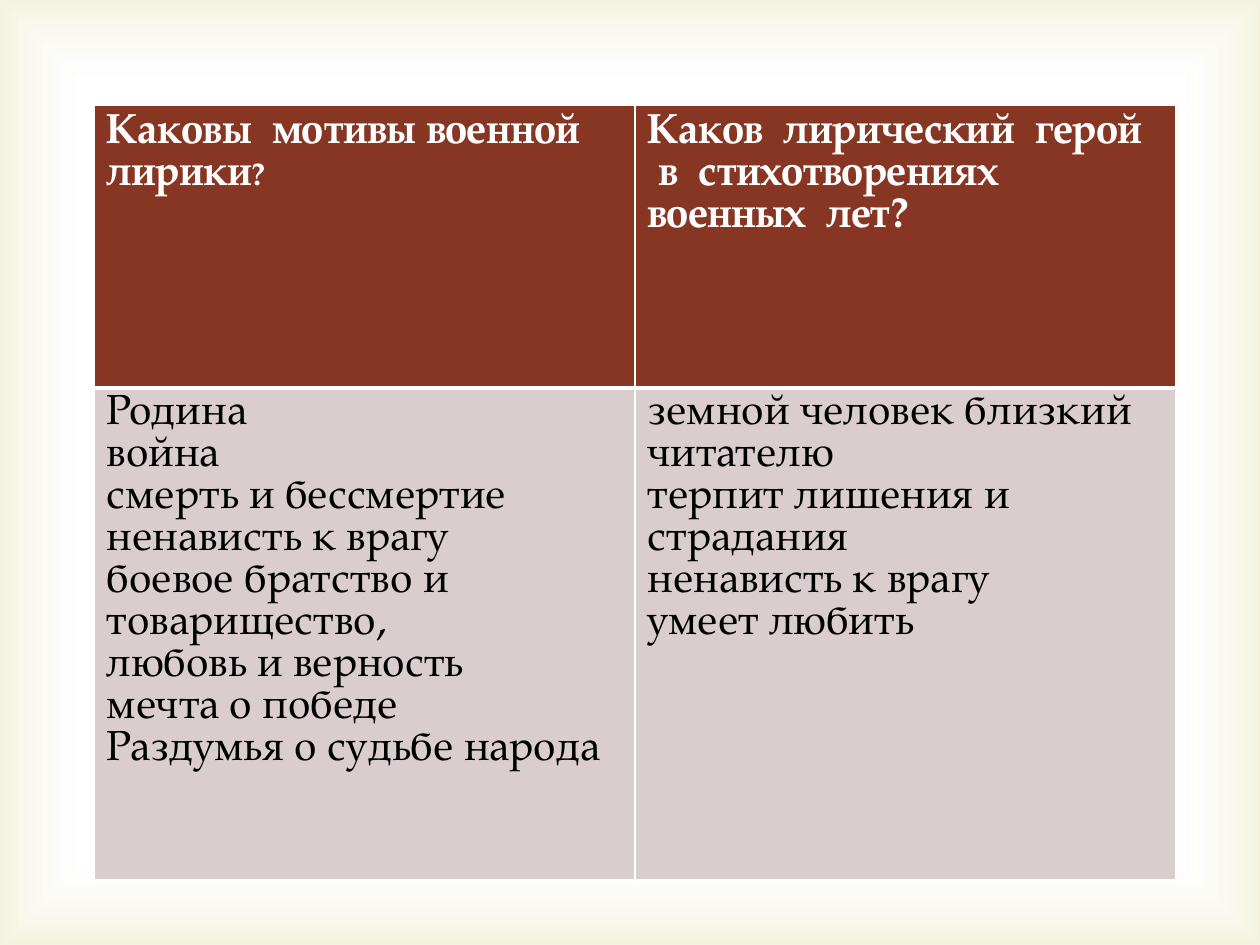
from dataclasses import dataclass

from lxml import etree
from pptx import Presentation
from pptx.dml.color import RGBColor
from pptx.enum import shapes
from pptx.oxml import parse_xml
from pptx.oxml.ns import nsdecls, qn
from pptx.util import Cm, Pt


@dataclass(frozen=True)
class Theme:
    font: str = "TeX Gyre Pagella"
    size: int = 24
    small: int = 18
    line_pitch: int = 24
    thin: int = 1
    thick: int = 3
    white: str = "FFFFFF"
    black: str = "000000"
    glow: str = "D1CA75"
    header: str = "873624"
    body: str = "D9CECD"


@dataclass(frozen=True)
class Column:
    question: str
    answers: tuple[str, ...]
    small_ending: str = ""


THEME = Theme()
COLUMNS = (
    Column(
        "Каковы  мотивы военной лирики",
        (
            "Родина",
            "война",
            "смерть и бессмертие",
            "ненависть к врагу",
            "боевое братство и товарищество,",
            "любовь и верность",
            "мечта о победе",
            "Раздумья о судьбе народа",
        ),
        small_ending="?",
    ),
    Column(
        "Каков  лирический  герой   в  стихотворениях  военных  лет?",
        (
            "земной человек близкий читателю",
            "терпит лишения и страдания",
            "ненависть к врагу",
            "умеет любить",
        ),
    ),
)
SLIDE_WIDTH, SLIDE_HEIGHT = Cm(25.4), Cm(19.05)
TABLE_LEFT, TABLE_TOP = Cm(1.9), Cm(2.13)
COLUMN_WIDTH = Cm(10.9)
ROW_HEIGHTS = (Cm(5.69), Cm(9.91))


def add_glow(slide) -> None:
    """Cover the slide with a gradient that tints only its edges."""
    glow = slide.shapes.add_shape(
        shapes.MSO_SHAPE.RECTANGLE, 0, 0, SLIDE_WIDTH, SLIDE_HEIGHT
    )
    glow.shadow.inherit = False
    glow.line.fill.background()
    glow.fill.background()
    stops = "".join(
        f'<a:gs pos="{position}000"><a:srgbClr val="{color}">'
        f'<a:alpha val="{alpha}000"/></a:srgbClr></a:gs>'
        for position, color, alpha in ((83, THEME.white, 11), (100, THEME.glow, 23))
    )
    gradient = parse_xml(
        f'<a:gradFill {nsdecls("a")} rotWithShape="1"><a:gsLst>{stops}</a:gsLst>'
        '<a:path path="rect"><a:fillToRect l="50000" t="50000" r="50000" b="50000"/>'
        "</a:path></a:gradFill>"
    )
    properties = glow.element.spPr
    properties.replace(properties.find(qn("a:noFill")), gradient)


def set_borders(cell, top: int, bottom: int) -> None:
    properties = cell._tc.get_or_add_tcPr()
    widths = (("L", THEME.thin), ("R", THEME.thin), ("T", top), ("B", bottom))
    for index, (side, width) in enumerate(widths):
        line = etree.Element(qn(f"a:ln{side}"), w=str(Pt(width)))
        fill = etree.SubElement(line, qn("a:solidFill"))
        etree.SubElement(fill, qn("a:srgbClr"), val=THEME.white)
        properties.insert(index, line)


def style_cell(cell, fill: str, color: str, bold: bool) -> None:
    cell.fill.solid()
    cell.fill.fore_color.rgb = RGBColor.from_string(fill)
    for paragraph in cell.text_frame.paragraphs:
        paragraph.line_spacing = Pt(THEME.line_pitch)
        for run in paragraph.runs:
            run.font.name = THEME.font
            run.font.size = Pt(THEME.size)
            run.font.bold = bold
            run.font.color.rgb = RGBColor.from_string(color)


def fill_column(table, index: int, column: Column) -> None:
    table.columns[index].width = COLUMN_WIDTH
    question, answers = table.cell(0, index), table.cell(1, index)

    question.text_frame.text = column.question
    if column.small_ending:
        ending = question.text_frame.paragraphs[0].add_run()
        ending.text = column.small_ending
    style_cell(question, THEME.header, THEME.white, bold=True)
    if column.small_ending:
        ending.font.size = Pt(THEME.small)
    set_borders(question, top=THEME.thin, bottom=THEME.thick)

    answers.text_frame.text = "\n".join(column.answers)
    style_cell(answers, THEME.body, THEME.black, bold=False)
    set_borders(answers, top=THEME.thick, bottom=THEME.thin)


def add_questions(slide) -> None:
    table = slide.shapes.add_table(
        len(ROW_HEIGHTS), len(COLUMNS), TABLE_LEFT, TABLE_TOP,
        COLUMN_WIDTH * len(COLUMNS), sum(ROW_HEIGHTS),
    ).table
    table.horz_banding = False
    for row, height in zip(table.rows, ROW_HEIGHTS):
        row.height = height
    for index, column in enumerate(COLUMNS):
        fill_column(table, index, column)


def main() -> None:
    presentation = Presentation()
    presentation.slide_width = SLIDE_WIDTH
    presentation.slide_height = SLIDE_HEIGHT
    slide = presentation.slides.add_slide(presentation.slide_layouts[6])
    add_glow(slide)
    add_questions(slide)
    presentation.save("out.pptx")


if __name__ == "__main__":
    main()
